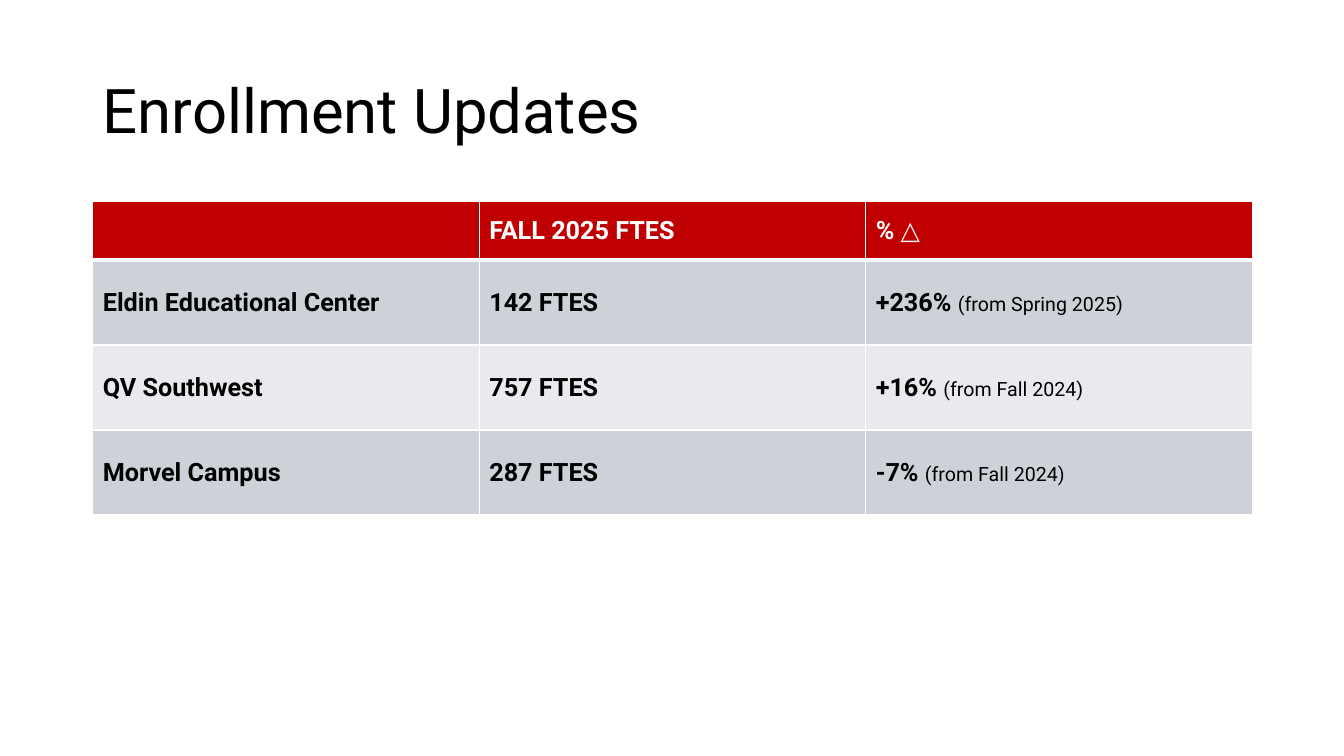
from dataclasses import dataclass
from lxml import etree
from pptx import Presentation
from pptx.dml.color import RGBColor
from pptx.enum.text import MSO_ANCHOR, PP_ALIGN
from pptx.oxml.ns import qn
from pptx.util import Inches, Pt

MIDDLE = MSO_ANCHOR.MIDDLE
LEFT = PP_ALIGN.LEFT


@dataclass(frozen=True)
class Theme:
    face: str = "Roboto"
    ink: str = "000000"
    white: str = "FFFFFF"
    head: str = "C00000"
    bands: tuple = ("CCD2D8", "E8EAED")
    title: int = 44
    body: int = 18
    note: int = 14


THEME = Theme()
TITLE_BOX = (0.92, 0.4, 11.5, 1.45)
TABLE_BOX = (0.92, 2, 11.5, 3.11)
HEAD_HIGH = 0.58
HEADS = ("", "FALL 2025 FTES", "% △")
ROWS = (
    ("Eldin Educational Center", "142 FTES", "+236% ", "(from Spring 2025)"),
    ("QV Southwest", "757 FTES", "+16% ", "(from Fall 2024)"),
    ("Morvel Campus", "287 FTES", "-7% ", "(from Fall 2024)"),
)


def apply(item, values):
    for name, value in values.items():
        setattr(item, name, value)


def write(para, text, size, color, bold=False):
    run = para.add_run()
    run.text = text
    apply(run.font, {"name": THEME.face, "size": Pt(size), "bold": bold})
    run.font.color.rgb = RGBColor.from_string(color)


def edge(cell, low):
    props = cell._tc.get_or_add_tcPr()
    for spot, (side, wide) in enumerate((("L", 1), ("R", 1), ("T", 1), ("B", low))):
        line = etree.Element(qn(f"a:ln{side}"), w=str(Pt(wide)))
        fill = etree.SubElement(line, qn("a:solidFill"))
        etree.SubElement(fill, qn("a:srgbClr"), val=THEME.white)
        props.insert(spot, line)


def fill_cell(cell, parts, back, color, low=1):
    cell.fill.solid()
    cell.fill.fore_color.rgb = RGBColor.from_string(back)
    cell.vertical_anchor = MIDDLE
    para = cell.text_frame.paragraphs[0]
    for part, size, bold in zip(parts, (THEME.body, THEME.note), (True, False)):
        if part:
            write(para, part, size, color, bold)
    edge(cell, low)


def add_title(slide, box, text):
    shape = slide.shapes.title
    apply(shape, dict(zip(("left", "top", "width", "height"), map(Inches, box))))
    frame = shape.text_frame
    apply(frame, {"word_wrap": True, "vertical_anchor": MIDDLE})
    para = frame.paragraphs[0]
    apply(para, {"alignment": LEFT, "line_spacing": 0.9})
    write(para, text, THEME.title, THEME.ink)


def add_grid(slide, box, heads, rows):
    wide, high = box[2:]
    grid = slide.shapes.add_table(len(rows) + 1, len(heads), *map(Inches, box)).table
    for col in grid.columns:
        col.width = Inches(wide / len(heads))
    for num, row in enumerate(grid.rows):
        row.height = Inches((high - HEAD_HIGH) / len(rows) if num else HEAD_HIGH)
    for col, head in enumerate(heads):
        fill_cell(grid.cell(0, col), (head,), THEME.head, THEME.white, 3)
    for num, (site, count, change, since) in enumerate(rows):
        back = THEME.bands[num % len(THEME.bands)]
        for col, parts in enumerate(((site,), (count,), (change, since))):
            fill_cell(grid.cell(num + 1, col), parts, back, THEME.ink)


def main():
    deck = Presentation()
    apply(deck, {"slide_width": Inches(13.33), "slide_height": Inches(7.5)})
    slide = deck.slides.add_slide(deck.slide_layouts[5])
    add_title(slide, TITLE_BOX, "Enrollment Updates")
    add_grid(slide, TABLE_BOX, HEADS, ROWS)
    deck.save("out.pptx")


if __name__ == "__main__":
    main()
